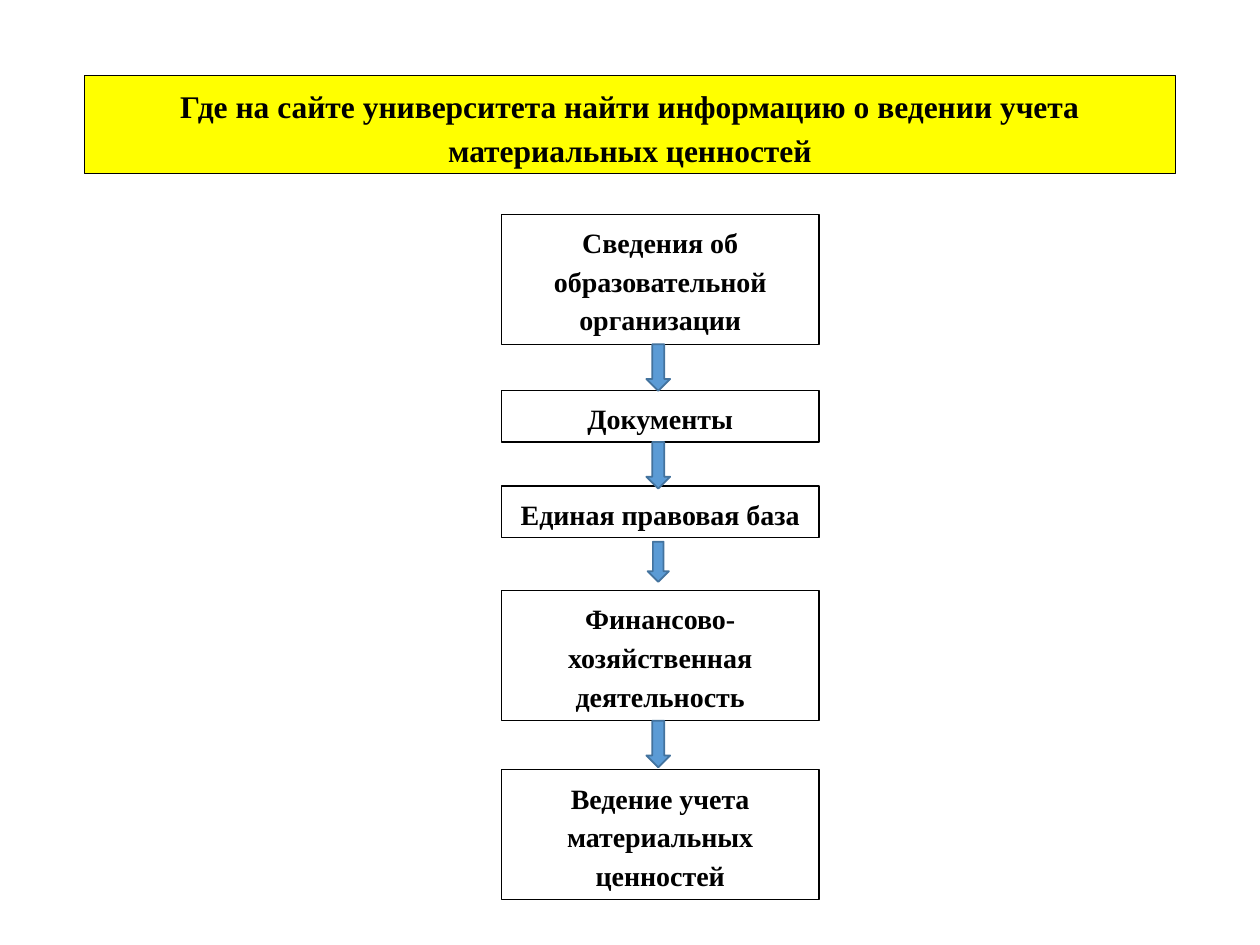
from pptx import Presentation
from pptx.dml.color import RGBColor
from pptx.enum.shapes import MSO_SHAPE
from pptx.enum.text import MSO_ANCHOR, MSO_AUTO_SIZE, PP_ALIGN
from pptx.util import Cm, Pt

BLACK = RGBColor(0x00, 0x00, 0x00)
YELLOW = RGBColor(0xFF, 0xFF, 0x00)
BLUE = RGBColor(0x5B, 0x9B, 0xD5)
DARK_BLUE = RGBColor(0x43, 0x73, 0x9E)

FONT = "Times New Roman"
TALL, LOW = 2.62, 1.04  # heights of three-line and one-line steps

# Step text, offset from the top of the path, height
STEPS = [
    ("Сведения об образовательной организации", 0, TALL),
    ("Документы", 3.55, LOW),
    ("Единая правовая база", 5.48, LOW),
    ("Финансово-хозяйственная деятельность", 7.59, TALL),
    ("Ведение учета материальных ценностей", 11.2, TALL),
]
# Distance below the step, width, height
ARROWS = [(0, 0.48, 0.94), (0, 0.48, 0.94), (0.08, 0.43, 0.81), (0, 0.48, 0.94)]


def add_outlined(slide, preset, box, fill, line, weight):
    shape = slide.shapes.add_shape(preset, *(Cm(length) for length in box))
    shape.shadow.inherit = False
    if fill is None:
        shape.fill.background()
    else:
        shape.fill.solid()
        shape.fill.fore_color.rgb = fill
    shape.line.color.rgb = line
    shape.line.width = Pt(weight)
    return shape


def add_label(slide, box, text, size, fill=None):
    label = add_outlined(slide, MSO_SHAPE.RECTANGLE, box, fill, BLACK, 0.75)
    frame = label.text_frame
    frame.text = text
    frame.word_wrap = True
    frame.auto_size = MSO_AUTO_SIZE.SHAPE_TO_FIT_TEXT
    frame.vertical_anchor = MSO_ANCHOR.TOP
    paragraph = frame.paragraphs[0]
    paragraph.alignment = PP_ALIGN.CENTER
    paragraph.line_spacing = 1.15
    paragraph.space_after = Pt(10)
    font = paragraph.runs[0].font
    font.name, font.size, font.bold = FONT, Pt(size), True
    font.color.rgb = BLACK


def add_title(slide, box):
    add_label(slide, box, "Где на сайте университета найти информацию о ведении "
              "учета материальных ценностей", 18, YELLOW)


def add_path(slide, left, top, width):
    # Steps through the site
    for text, offset, height in STEPS:
        add_label(slide, (left, top + offset, width, height), text, 16)

    # Arrow under every step but the last
    for (_, offset, height), (gap, arrow_width, arrow_height) in zip(STEPS, ARROWS):
        arrow_box = (left + (width - arrow_width) / 2 - 0.04,
                     top + offset + height + gap, arrow_width, arrow_height)
        add_outlined(slide, MSO_SHAPE.DOWN_ARROW, arrow_box, BLUE, DARK_BLUE, 1)


def main():
    presentation = Presentation()
    presentation.slide_width, presentation.slide_height = Cm(25.4), Cm(19.05)
    slide = presentation.slides.add_slide(presentation.slide_layouts[6])
    add_title(slide, (1.7, 1.52, 22, 1.98))
    add_path(slide, left=10.11, top=4.32, width=6.4)
    presentation.save("out.pptx")


if __name__ == "__main__":
    main()
